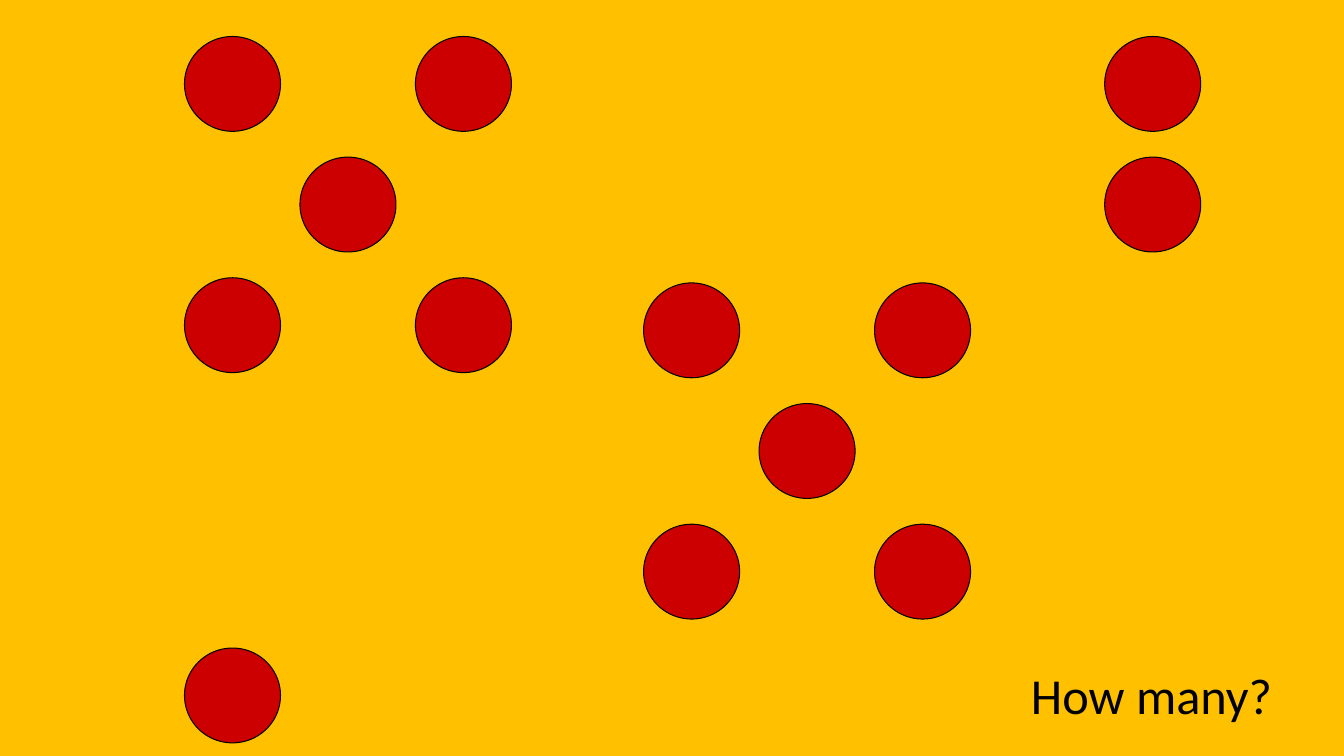
from dataclasses import dataclass

from pptx import Presentation
from pptx.dml.color import RGBColor
from pptx.enum.shapes import MSO_SHAPE
from pptx.enum.text import MSO_AUTO_SIZE
from pptx.util import Cm, Pt

OVAL = MSO_SHAPE.OVAL
GROW = MSO_AUTO_SIZE.SHAPE_TO_FIT_TEXT


@dataclass(frozen=True)
class Theme:
    back: RGBColor = RGBColor(0xFF, 0xC0, 0x00)
    dot: RGBColor = RGBColor(0xCC, 0x00, 0x00)
    ink: RGBColor = RGBColor(0x00, 0x00, 0x00)
    font: str = "Calibri"
    size: Pt = Pt(36)
    line: Pt = Pt(0.75)


THEME = Theme()
DOT_W, DOT_H = 2.42, 2.39
STEP_X, STEP_Y = 2.91, 3.04

FIVE = [(0, 0), (2, 2), (1, 1), (0, 2), (2, 0)]
TWO = [(0, 0), (0, 1)]
ONE = [(0, 0)]

GROUPS = [
    (4.65, 0.92, FIVE),
    (16.22, 7.13, FIVE),
    (27.84, 0.92, TWO),
    (4.65, 16.33, ONE),
]


def add_dot(group, left, top):
    dot = group.shapes.add_shape(OVAL, Cm(left), Cm(top), Cm(DOT_W), Cm(DOT_H))
    dot.shadow.inherit = False
    dot.fill.solid()
    dot.fill.fore_color.rgb = THEME.dot
    dot.line.color.rgb = THEME.ink
    dot.line.width = THEME.line


def add_dots(slide, left, top, cells):
    group = slide.shapes.add_group_shape()
    for col, row in cells:
        add_dot(group, left + col * STEP_X, top + row * STEP_Y)


def add_label(slide, text, left, top, width, height):
    box = slide.shapes.add_textbox(Cm(left), Cm(top), Cm(width), Cm(height))
    frame = box.text_frame
    frame.word_wrap = True
    frame.auto_size = GROW
    run = frame.paragraphs[0].add_run()
    run.text = text
    run.font.name = THEME.font
    run.font.size = THEME.size
    run.font.color.rgb = THEME.ink


def main():
    deck = Presentation()
    deck.slide_width = Cm(33.87)
    deck.slide_height = Cm(19.05)
    slide = deck.slides.add_slide(deck.slide_layouts[6])
    slide.background.fill.solid()
    slide.background.fill.fore_color.rgb = THEME.back
    for left, top, cells in GROUPS:
        add_dots(slide, left, top, cells)
    add_label(slide, "How many?", 25.73, 16.61, 11.38, 1.8)
    deck.save("out.pptx")


if __name__ == "__main__":
    main()
